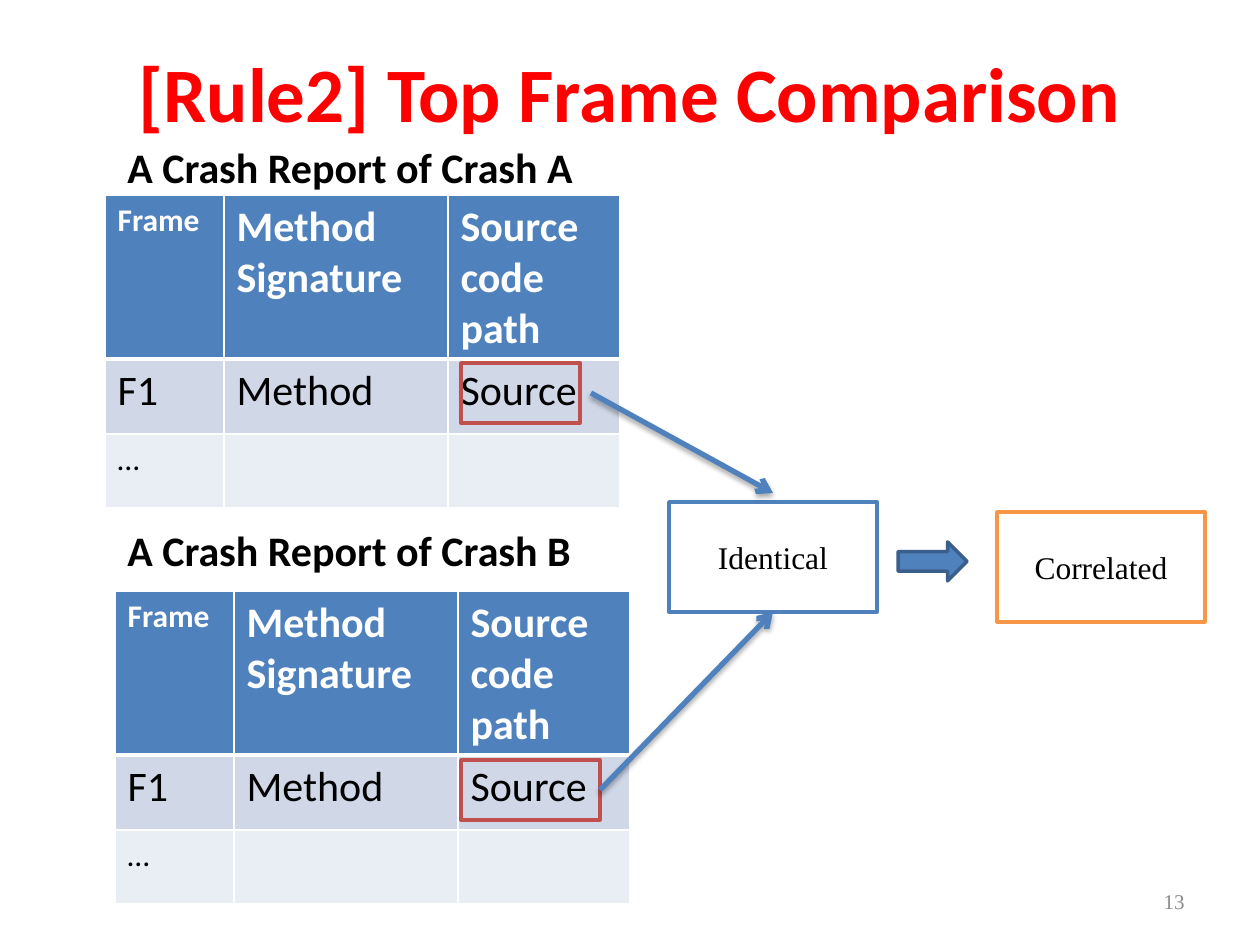
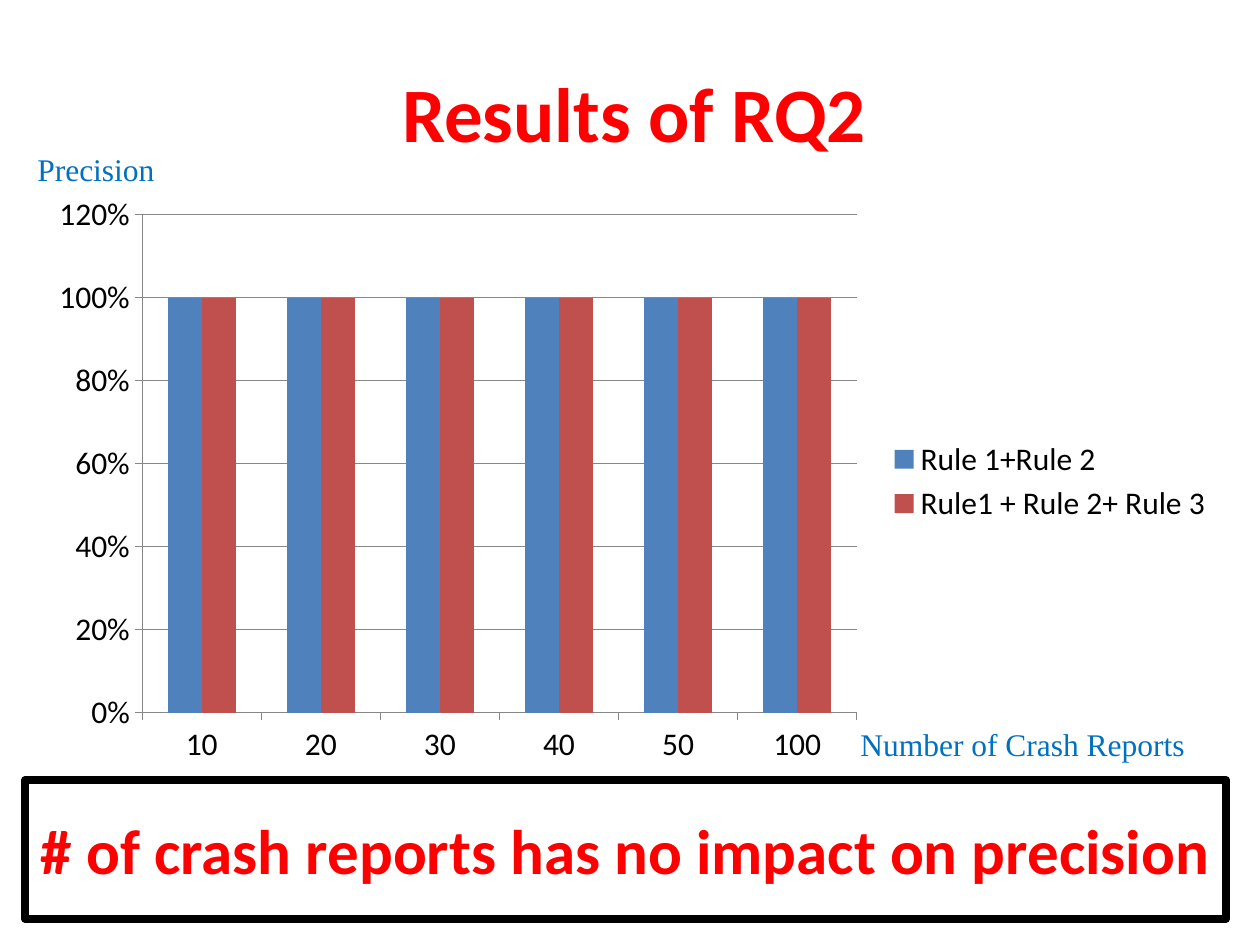
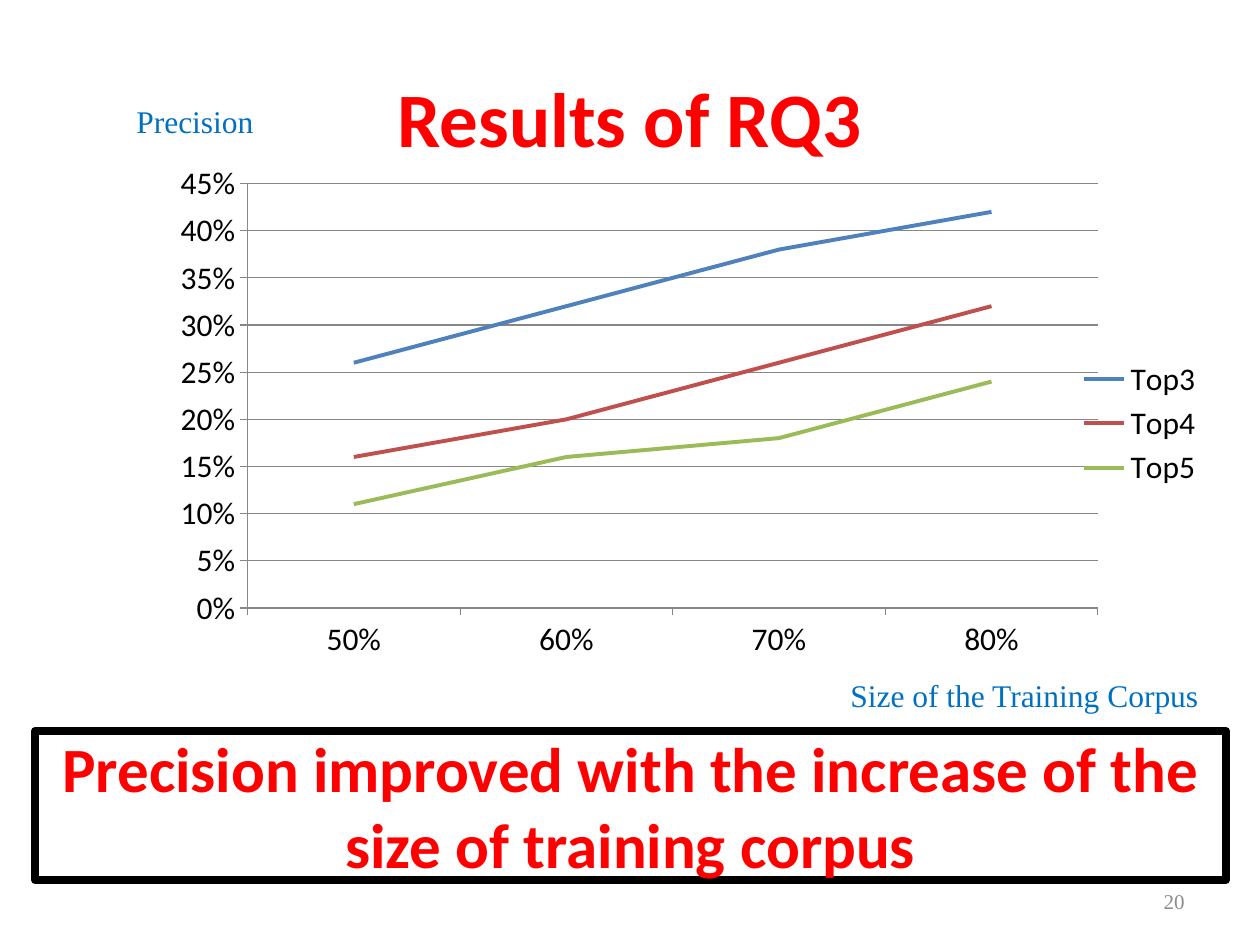
from lxml import etree
from pptx import Presentation
from pptx import util as u
from pptx.chart.data import CategoryChartData
from pptx.dml.color import RGBColor
from pptx.enum import chart as ch, shapes, text
from pptx.oxml import parse_xml
from pptx.oxml.ns import nsdecls, qn

SCALE = u.Inches(1) / 126
SANS, SERIF = "Calibri", "Times New Roman"
COLORS = {
    "white": "FFFFFF", "black": "000000", "title": "FF0000", "number": "8C8C8C",
    "axis_name": "0070C0", "blue": "4F81BD", "dark_blue": "3A5F8C", "red": "C0504D",
    "green": "9BBB59", "orange": "F79646", "band": "D0D8E8", "light_band": "E9EDF4",
    "grid": "878787",
}
LEFT, CENTER, RIGHT = text.PP_ALIGN.LEFT, text.PP_ALIGN.CENTER, text.PP_ALIGN.RIGHT
TOP, MIDDLE = text.MSO_ANCHOR.TOP, text.MSO_ANCHOR.MIDDLE

FRAME_ROWS = [
    [("Frame", 18), ("Method Signature", 24), ("Source code path", 24)],
    [("F1", 24), ("Method", 24), ("Source", 24)],
    [("…", 18), ("", 18), ("", 18)],
]
FRAME_COLUMNS = [119, 224, 172]
FRAME_HEIGHTS = [163, 75, 74]
ROW_FILLS = ["blue", "band", "light_band"]
REPORTS = [
    {"caption": "A Crash Report of Crash A", "caption_at": (115, 135, 496, 63),
     "table_at": (105, 195), "source_at": (461, 363, 119, 60)},
    {"caption": "A Crash Report of Crash B", "caption_at": (115, 518, 496, 63),
     "table_at": (115, 591), "source_at": (461, 760, 139, 60)},
]
RESULTS = [
    {"title": "Results of RQ2", "title_at": (302, 37, 665, 149), "number": None,
     "kind": ch.XL_CHART_TYPE.COLUMN_CLUSTERED, "chart_at": (35, 185, 1191, 593),
     "plot": (0.09, 0.05, 0.6, 0.84), "top": 1.2, "step": 0.2,
     "categories": ["10", "20", "30", "40", "50", "100"],
     "series": [("Rule 1+Rule 2", [1] * 6, "blue"),
                ("Rule1 + Rule 2+ Rule 3", [1] * 6, "red")],
     "axis_names": [("Precision", (25, 144, 149, 50)),
                    ("Number of Crash Reports", (848, 719, 357, 50))],
     "finding": "# of crash reports has no impact on precision",
     "finding_at": (25, 780, 1201, 139)},
    {"title": "Results of RQ3", "title_at": (0, 38, 1260, 157), "number": "20",
     "kind": ch.XL_CHART_TYPE.LINE, "chart_at": (35, 116, 1181, 615),
     "plot": (0.18, 0.11, 0.72, 0.69), "top": 0.45, "step": 0.05,
     "categories": ["50%", "60%", "70%", "80%"],
     "series": [("Top3", [0.26, 0.32, 0.38, 0.42], "blue"),
                ("Top4", [0.16, 0.2, 0.26, 0.32], "red"),
                ("Top5", [0.11, 0.16, 0.18, 0.24], "green")],
     "axis_names": [("Precision", (124, 96, 149, 50)),
                    ("Size of the Training Corpus", (838, 670, 422, 50))],
     "finding": "Precision improved with the increase of the size of training corpus",
     "finding_at": (35, 731, 1191, 149)},
]


def px(*lengths):
    return [round(length * SCALE) for length in lengths]


def color(name):
    return RGBColor.from_string(COLORS[name])


def write(frame, words, size=18, font=SANS, ink="black", bold=False, align=LEFT, anchor=TOP):
    frame.word_wrap = True
    frame.vertical_anchor = anchor
    paragraph = frame.paragraphs[0]
    paragraph.alignment = align
    run = paragraph.add_run()
    run.text = words
    run.font.size, run.font.name, run.font.bold = u.Pt(size), font, bold
    run.font.color.rgb = color(ink)


def add_text(slide, at, words, **style):
    write(slide.shapes.add_textbox(*px(*at)).text_frame, words, **style)


def add_title(slide, at, words):
    add_text(slide, at, words, size=44, ink="title", bold=True, align=CENTER, anchor=MIDDLE)


def add_number(slide, number):
    add_text(slide, (903, 876, 294, 50), number, size=12, font=SERIF, ink="number",
             align=RIGHT, anchor=MIDDLE)


def add_box(slide, at, line, width=2, fill=None, kind=shapes.MSO_SHAPE.RECTANGLE):
    shape = slide.shapes.add_shape(kind, *px(*at))
    shape.shadow.inherit = False
    if fill:
        shape.fill.solid()
        shape.fill.fore_color.rgb = color(fill)
    else:
        shape.fill.background()
    shape.line.color.rgb = color(line)
    shape.line.width = u.Pt(width)
    return shape


def add_arrow(slide, start, end):
    arrow = slide.shapes.add_connector(shapes.MSO_CONNECTOR.STRAIGHT, *px(*start, *end))
    arrow.line.color.rgb = color("blue")
    arrow.line.width = u.Pt(3)
    etree.SubElement(arrow.line._get_or_add_ln(), qn("a:tailEnd"), type="arrow")
    arrow._element.spPr.append(parse_xml(
        f'<a:effectLst {nsdecls("a")}><a:outerShdw blurRad="{u.Pt(3.1)}" dist="{u.Pt(1.8)}" '
        f'dir="5400000" rotWithShape="0"><a:srgbClr val="{COLORS["black"]}">'
        '<a:alpha val="35000"/></a:srgbClr></a:outerShdw></a:effectLst>'))
    return arrow


def set_borders(cell, widths):
    for side, width in widths.items():
        cell._tc.get_or_add_tcPr().append(parse_xml(
            f'<a:ln{side} {nsdecls("a")} w="{u.Pt(width)}"><a:solidFill>'
            f'<a:srgbClr val="{COLORS["white"]}"/></a:solidFill></a:ln{side}>'))


def add_frame_table(slide, at):
    size = (sum(FRAME_COLUMNS), sum(FRAME_HEIGHTS))
    table = slide.shapes.add_table(len(FRAME_ROWS), len(FRAME_COLUMNS), *px(*at, *size)).table
    for column, width in zip(table.columns, px(*FRAME_COLUMNS)):
        column.width = width
    for index, (row, height) in enumerate(zip(table.rows, px(*FRAME_HEIGHTS))):
        row.height = height
        header = index == 0
        borders = {"L": 1, "R": 1, "T": 3 if index == 1 else 1, "B": 3 if header else 1}
        for cell, (words, size) in zip(row.cells, FRAME_ROWS[index]):
            set_borders(cell, borders)
            cell.fill.solid()
            cell.fill.fore_color.rgb = color(ROW_FILLS[index])
            if words:
                write(cell.text_frame, words, size=size, bold=header,
                      ink="white" if header else "black")


def place_plot(chart, area):
    plot_area = chart._chartSpace.chart.plotArea
    for layout in plot_area.findall(qn("c:layout")):
        plot_area.remove(layout)
    values = "".join(f'<c:{key} val="{value}"/>' for key, value in zip("xywh", area))
    plot_area.insert(0, parse_xml(
        f'<c:layout {nsdecls("c")}><c:manualLayout><c:layoutTarget val="inner"/>'
        f'<c:xMode val="edge"/><c:yMode val="edge"/>{values}</c:manualLayout></c:layout>'))


def add_result_chart(slide, result):
    data = CategoryChartData(number_format="0%")
    data.categories = result["categories"]
    for name, values, _ in result["series"]:
        data.add_series(name, values)
    chart = slide.shapes.add_chart(result["kind"], *px(*result["chart_at"]), data).chart
    chart.has_title = False
    chart.font.size, chart.font.name = u.Pt(18), SANS
    chart.font.color.rgb = color("black")
    chart.has_legend = True
    chart.legend.position = ch.XL_LEGEND_POSITION.RIGHT
    chart.legend.include_in_layout = False

    value_axis = chart.value_axis
    value_axis.minimum_scale, value_axis.maximum_scale = 0, result["top"]
    value_axis.major_unit = result["step"]
    value_axis.tick_labels.number_format = "0%"
    value_axis.tick_labels.number_format_is_linked = False
    value_axis.has_major_gridlines = True
    for axis in (value_axis, chart.category_axis):
        axis.major_tick_mark = ch.XL_TICK_MARK.OUTSIDE
    for part in (value_axis, chart.category_axis, value_axis.major_gridlines):
        part.format.line.color.rgb = color("grid")
        part.format.line.width = u.Pt(0.75)

    plot = chart.plots[0]
    plot.vary_by_categories = False
    is_line = result["kind"] == ch.XL_CHART_TYPE.LINE
    if not is_line:
        plot.gap_width, plot.overlap = 150, 0
    for series, (_, _, ink) in zip(plot.series, result["series"]):
        if is_line:
            series.smooth = False
            series.format.line.color.rgb = color(ink)
            series.format.line.width = u.Pt(2.25)
        else:
            series.format.fill.solid()
            series.format.fill.fore_color.rgb = color(ink)
    place_plot(chart, result["plot"])


def build_comparison(slide):
    add_title(slide, (0, 37, 1260, 110), "[Rule2] Top Frame Comparison")
    add_number(slide, "13")
    sources = []
    for report in REPORTS:
        add_text(slide, report["caption_at"], report["caption"], size=24, bold=True)
        add_frame_table(slide, report["table_at"])
        sources.append(add_box(slide, report["source_at"], "red"))
    identical = add_box(slide, (669, 502, 208, 110), "blue", fill="white")
    correlated = add_box(slide, (997, 512, 208, 110), "orange", fill="white")
    for box, words in ((identical, "Identical"), (correlated, "Correlated")):
        write(box.text_frame, words, font=SERIF, align=CENTER, anchor=MIDDLE)
    add_box(slide, (898, 542, 69, 39), "dark_blue", fill="blue",
            kind=shapes.MSO_SHAPE.RIGHT_ARROW)
    add_arrow(slide, (591, 393), (773, 493))
    joined = add_arrow(slide, (600, 790), (773, 612))
    joined.begin_connect(sources[1], 3)
    joined.end_connect(identical, 2)


def build_result(slide, result):
    add_title(slide, result["title_at"], result["title"])
    if result["number"]:
        add_number(slide, result["number"])
    add_result_chart(slide, result)
    for words, at in result["axis_names"]:
        add_text(slide, at, words, font=SERIF, ink="axis_name")
    finding = add_box(slide, result["finding_at"], "black", width=4.5, fill="white")
    write(finding.text_frame, result["finding"], size=36, ink="title", bold=True,
          align=CENTER, anchor=MIDDLE)


def main():
    presentation = Presentation()
    presentation.slide_width, presentation.slide_height = px(1260, 945)
    blank = presentation.slide_layouts[6]
    build_comparison(presentation.slides.add_slide(blank))
    for result in RESULTS:
        build_result(presentation.slides.add_slide(blank), result)
    presentation.save("out.pptx")


if __name__ == "__main__":
    main()
